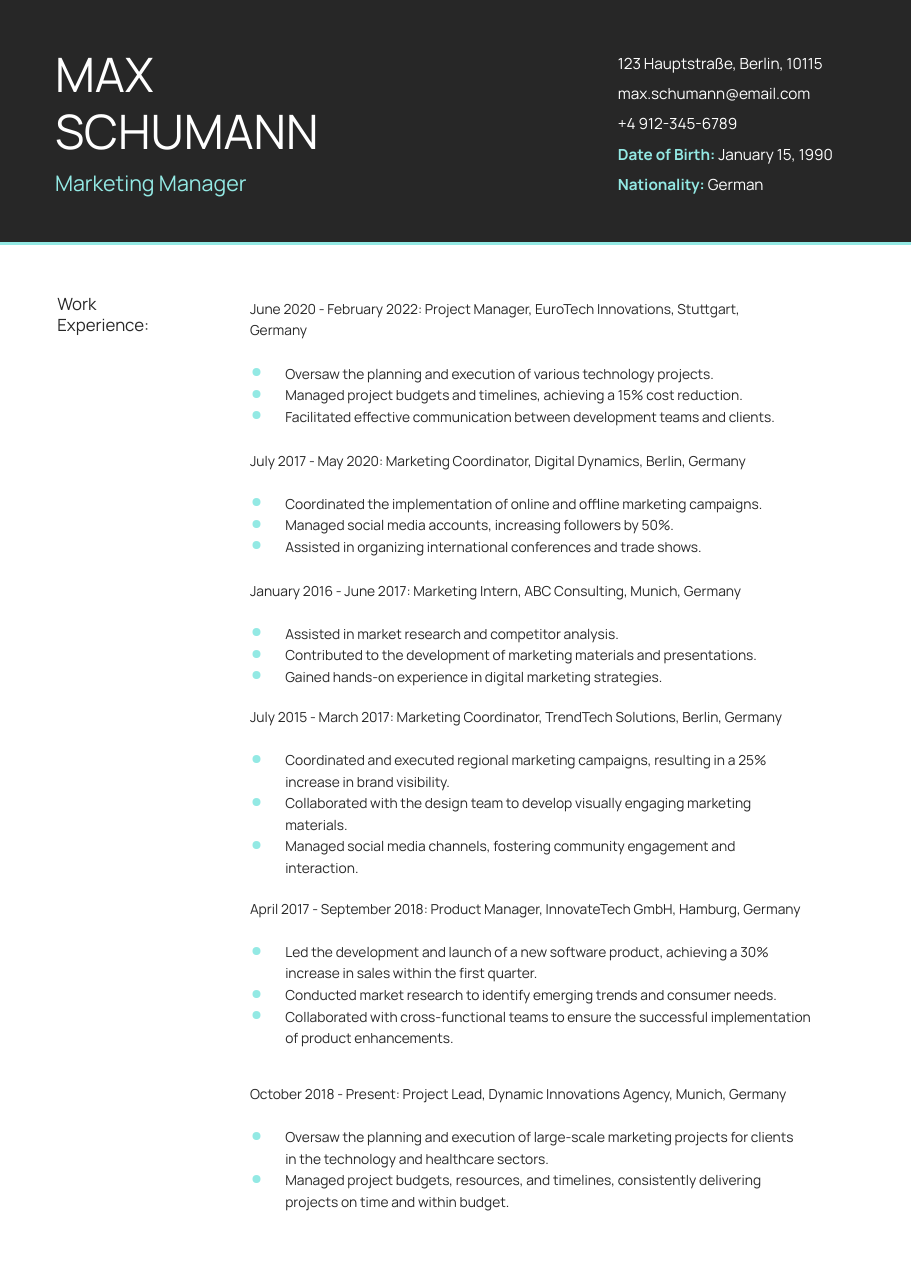
from lxml import etree
from pptx import Presentation
from pptx.dml.color import RGBColor
from pptx.enum.shapes import MSO_CONNECTOR, MSO_SHAPE
from pptx.enum.text import MSO_AUTO_SIZE
from pptx.oxml.ns import qn
from pptx.util import Inches, Pt

RECT = MSO_SHAPE.RECTANGLE
STRAIGHT = MSO_CONNECTOR.STRAIGHT
GROW = MSO_AUTO_SIZE.SHAPE_TO_FIT_TEXT

DARK, MINT, WHITE = "272727", "93E9E4", "FFFFFF"
FONT = "Manrope"

NAME = ["MAX", "SCHUMANN"]
ROLE = "Marketing Manager"
CONTACTS = [
    ("", "123 Hauptstraße, Berlin, 10115"),
    ("", "max.schumann@email.com"),
    ("", "+4 912-345-6789"),
    ("Date of Birth:", " January 15, 1990"),
    ("Nationality: ", "German"),
]
SECTION = ["Work", "Experience:"]
JOBS = [
    (2.68, "June 2020 - February 2022: Project Manager, EuroTech Innovations, Stuttgart,\nGermany", [
        "Oversaw the planning and execution of various technology projects.",
        "Managed project budgets and timelines, achieving a 15% cost reduction.",
        "Facilitated effective communication between development teams and clients.",
    ]),
    (4.06, "July 2017 - May 2020: Marketing Coordinator, Digital Dynamics, Berlin, Germany", [
        "Coordinated the implementation of online and offline marketing campaigns.",
        "Managed social media accounts, increasing followers by 50%.",
        "Assisted in organizing international conferences and trade shows.",
    ]),
    (5.24, "January 2016 - June 2017: Marketing Intern, ABC Consulting, Munich, Germany", [
        "Assisted in market research and competitor analysis.",
        "Contributed to the development of marketing materials and presentations.",
        "Gained hands-on experience in digital marketing strategies.",
    ]),
    (6.39, "July 2015 - March 2017: Marketing Coordinator, TrendTech Solutions, Berlin, Germany", [
        "Coordinated and executed regional marketing campaigns, resulting in a 25%\nincrease in brand visibility.",
        "Collaborated with the design team to develop visually engaging marketing\nmaterials.",
        "Managed social media channels, fostering community engagement and\ninteraction.",
    ]),
    (8.13, "April 2017 - September 2018: Product Manager, InnovateTech GmbH, Hamburg, Germany", [
        "Led the development and launch of a new software product, achieving a 30%\nincrease in sales within the first quarter.",
        "Conducted market research to identify emerging trends and consumer needs.",
        "Collaborated with cross-functional teams to ensure the successful implementation\nof product enhancements.",
    ]),
    (9.81, "October 2018 - Present: Project Lead, Dynamic Innovations Agency, Munich, Germany", [
        "Oversaw the planning and execution of large-scale marketing projects for clients\nin the technology and healthcare sectors.",
        "Managed project budgets, resources, and timelines, consistently delivering\nprojects on time and within budget.",
    ]),
]

PAGE_W, PAGE_H = 8.27, 11.69
HEADER_H, RULE_Y = 2.2, 2.21
NAME_X, SECTION_X, CONTACT_X = 0.5, 0.52, 5.61
CONTACT_Y, CONTACT_STEP = 0.49, 0.275
HEADING_X, BULLET_X, JOB_W = 2.27, 2.09, 5.73
LINE_H, LINE_TRIM, HEADING_GAP = 0.2, 0.05, 0.19
INDENT, HANG = 0.5, 0.31


def rgb(color):
    return RGBColor.from_string(color)


def add_bullet(p):
    pPr = p._p.get_or_add_pPr()
    pPr.set("marL", str(Inches(INDENT)))
    pPr.set("indent", str(-Inches(HANG)))
    clr = etree.SubElement(pPr, qn("a:buClr"))
    etree.SubElement(clr, qn("a:srgbClr")).set("val", MINT)
    etree.SubElement(pPr, qn("a:buChar")).set("char", "●")


def add_text(s, box, paragraphs, size, spacing=None, bullets=False):
    sp = s.shapes.add_textbox(*map(Inches, box))
    tf = sp.text_frame
    tf.word_wrap = True
    tf.auto_size = GROW
    tf.margin_left = tf.margin_right = tf.margin_top = tf.margin_bottom = 0
    for i, runs in enumerate(paragraphs):
        p = tf.add_paragraph() if i else tf.paragraphs[0]
        if spacing:
            p.line_spacing = spacing
        if bullets:
            add_bullet(p)
        for text, color, bold in runs:
            for j, line in enumerate(text.split("\n")):
                if j:
                    p.add_line_break()
                r = p.add_run()
                r.text = line
                r.font.name = FONT
                r.font.size = Pt(size)
                r.font.bold = bold
                r.font.color.rgb = rgb(color)


def plain(lines, color):
    return [[(line, color, False)] for line in lines]


def line_count(texts):
    return sum(len(t.split("\n")) for t in texts)


def add_job_text(s, x, y, texts, bullets):
    h = line_count(texts) * LINE_H - LINE_TRIM
    add_text(s, (x, y, JOB_W, h), plain(texts, DARK), 9, 1.3, bullets)


def add_header(s):
    sp = s.shapes.add_shape(RECT, 0, 0, Inches(PAGE_W), Inches(HEADER_H))
    sp.shadow.inherit = False
    sp.fill.solid()
    sp.fill.fore_color.rgb = rgb(DARK)
    sp.line.fill.background()
    add_text(s, (NAME_X, 0.41, 3.3, 1.04), plain(NAME, WHITE), 31)
    add_text(s, (NAME_X, 1.54, 3.3, 0.24), plain([ROLE], MINT), 14)
    for i, (label, value) in enumerate(CONTACTS):
        runs = [(label, MINT, True)] if label else []
        runs.append((value, WHITE, False))
        add_text(s, (CONTACT_X, CONTACT_Y + i * CONTACT_STEP, 2.5, 0.17), [runs], 10)
    rule = s.shapes.add_connector(STRAIGHT, 0, Inches(RULE_Y), Inches(PAGE_W), Inches(RULE_Y))
    rule.line.color.rgb = rgb(MINT)
    rule.line.width = Pt(1.5)
    etree.SubElement(rule._element.spPr, qn("a:effectLst"))


def add_jobs(s):
    add_text(s, (SECTION_X, 2.67, 1.52, 0.37), plain(SECTION, DARK), 11)
    for y, heading, duties in JOBS:
        add_job_text(s, HEADING_X, y, [heading], False)
        duties_y = y + HEADING_GAP + line_count([heading]) * LINE_H
        add_job_text(s, BULLET_X, duties_y, duties, True)


def main():
    prs = Presentation()
    prs.slide_width, prs.slide_height = Inches(PAGE_W), Inches(PAGE_H)
    s = prs.slides.add_slide(prs.slide_layouts[6])
    add_header(s)
    add_jobs(s)
    prs.save("out.pptx")


if __name__ == "__main__":
    main()
